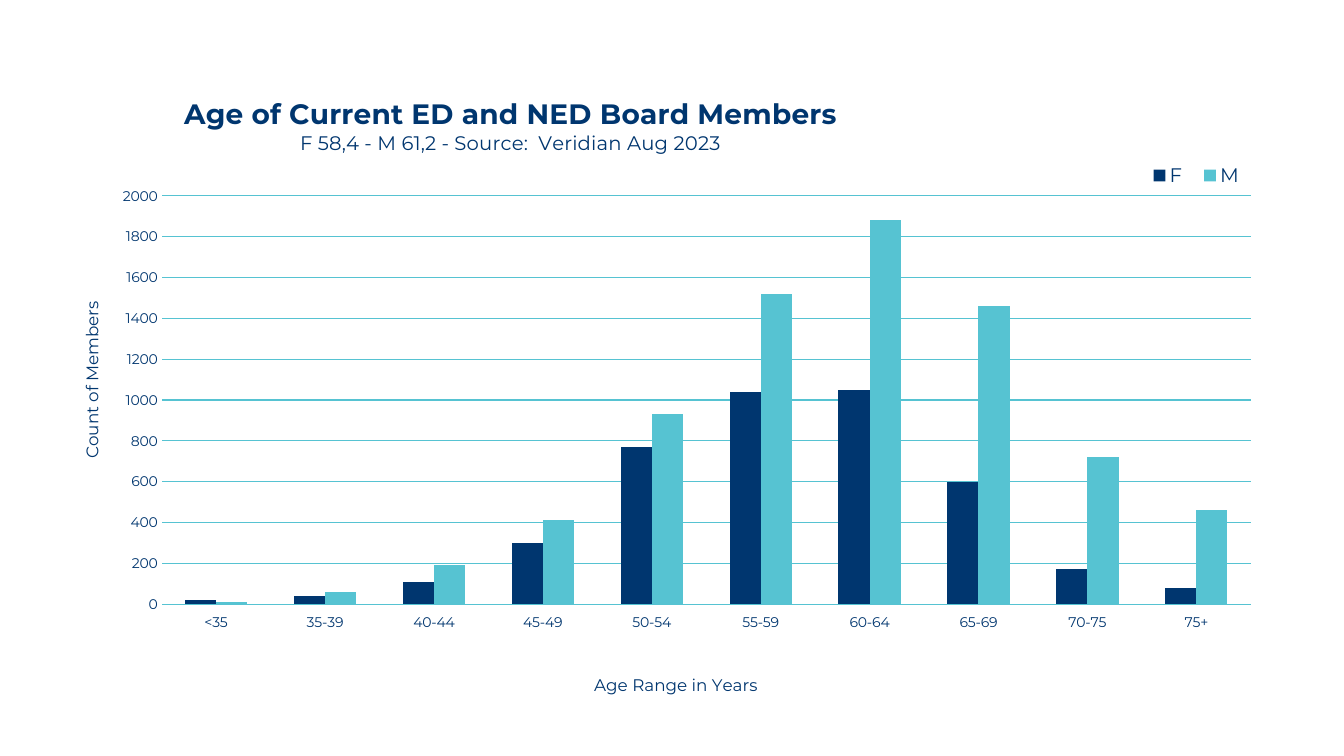
from lxml import etree
from pptx import Presentation
from pptx.chart.data import CategoryChartData
from pptx.dml.color import RGBColor
from pptx.enum.chart import XL_CHART_TYPE as ChartType
from pptx.enum.chart import XL_LEGEND_POSITION as LegendPos
from pptx.enum.chart import XL_TICK_MARK as Tick
from pptx.oxml.ns import qn
from pptx.util import Inches, Pt

NAVY = RGBColor(0x00, 0x36, 0x6F)
TEAL = RGBColor(0x56, 0xC3, 0xD2)
FONT = "Montserrat"

AGES = ["<35", "35-39", "40-44", "45-49", "50-54",
        "55-59", "60-64", "65-69", "70-75", "75+"]
MEMBERS = {
    "F": ([20, 40, 110, 300, 770, 1040, 1050, 600, 170, 80], NAVY),
    "M": ([10, 60, 190, 410, 930, 1520, 1880, 1460, 720, 460], TEAL),
}


def style_font(font, size, bold=False, color=NAVY):
    font.name = FONT
    font.size = Pt(size)
    font.bold = bold
    font.color.rgb = color


def write(p, text, **fmt):
    r = p.add_run()
    r.text = text
    style_font(r.font, **fmt)


def place(element, after=None, target=None, **box):
    for old in element.findall(qn("c:layout")):
        element.remove(old)
    layout = etree.Element(qn("c:layout"))
    manual = etree.SubElement(layout, qn("c:manualLayout"))
    if target:
        etree.SubElement(manual, qn("c:layoutTarget")).set("val", target)
    for axis in "xy":
        etree.SubElement(manual, qn(f"c:{axis}Mode")).set("val", "edge")
    for key, value in box.items():
        etree.SubElement(manual, qn(f"c:{key}")).set("val", str(value))
    if after:
        element.find(qn(after)).addnext(layout)
    else:
        element.insert(0, layout)


class AgeSlide:
    def __init__(self, prs):
        self.s = prs.slides.add_slide(prs.slide_layouts[6])

    def columns(self, x, y, w, h):
        data = CategoryChartData()
        data.categories = AGES
        for name, (values, _) in MEMBERS.items():
            data.add_series(name, values)
        frame = self.s.shapes.add_chart(
            ChartType.COLUMN_CLUSTERED, Inches(x), Inches(y),
            Inches(w), Inches(h), data)
        self.chart = frame.chart
        style_font(self.chart.font, 10)
        plot = self.chart.plots[0]
        plot.gap_width, plot.overlap = 150, 0
        plot.vary_by_categories = False
        for series in plot.series:
            series.format.fill.solid()
            series.format.fill.fore_color.rgb = MEMBERS[series.name][1]
        place(self.chart._chartSpace.chart.plotArea, target="inner",
              x=0.125, y=0.173, w=0.842, h=0.603)

    def title(self, heading, subtitle, x, y):
        title = self.chart.chart_title
        tf = title.text_frame
        write(tf.paragraphs[0], heading, size=20, bold=True)
        write(tf.add_paragraph(), subtitle, size=14)
        title.include_in_layout = False
        place(title._element, after="c:tx", x=x, y=y)

    def axis(self, axis, text, x, y, tick):
        style_font(axis.tick_labels.font, 10)
        axis.major_tick_mark = tick
        axis.minor_tick_mark = Tick.NONE
        axis.format.line.fill.background()
        write(axis.axis_title.text_frame.paragraphs[0], text, size=12)
        place(axis.axis_title._element, after="c:tx", x=x, y=y)

    def scale(self, top, step):
        axis = self.chart.value_axis
        axis.minimum_scale, axis.maximum_scale = 0, top
        axis.major_unit = step
        axis.has_major_gridlines = True
        line = axis.major_gridlines.format.line
        line.color.rgb = TEAL
        line.width = Pt(0.75)

    def legend(self, **box):
        self.chart.has_legend = True
        legend = self.chart.legend
        legend.position = LegendPos.BOTTOM
        legend.include_in_layout = False
        style_font(legend.font, 14)
        place(legend._element, after="c:legendPos", **box)


def main():
    prs = Presentation()
    prs.slide_width, prs.slide_height = Inches(13.33), Inches(7.5)
    s = AgeSlide(prs)
    s.columns(0, 0.78, 12.83, 6.72)
    s.title("Age of Current ED and NED Board Members",
            "F 58,4 - M 61,2 - Source:  Veridian Aug 2023", 0.14, 0.02)
    s.axis(s.chart.category_axis, "Age Range in Years", 0.457, 0.874, Tick.OUTSIDE)
    s.axis(s.chart.value_axis, "Count of Members", 0.06, 0.324, Tick.NONE)
    s.scale(2000, 200)
    s.legend(x=0.88, y=0.118, w=0.09, h=0.05)
    prs.save("out.pptx")


if __name__ == "__main__":
    main()
